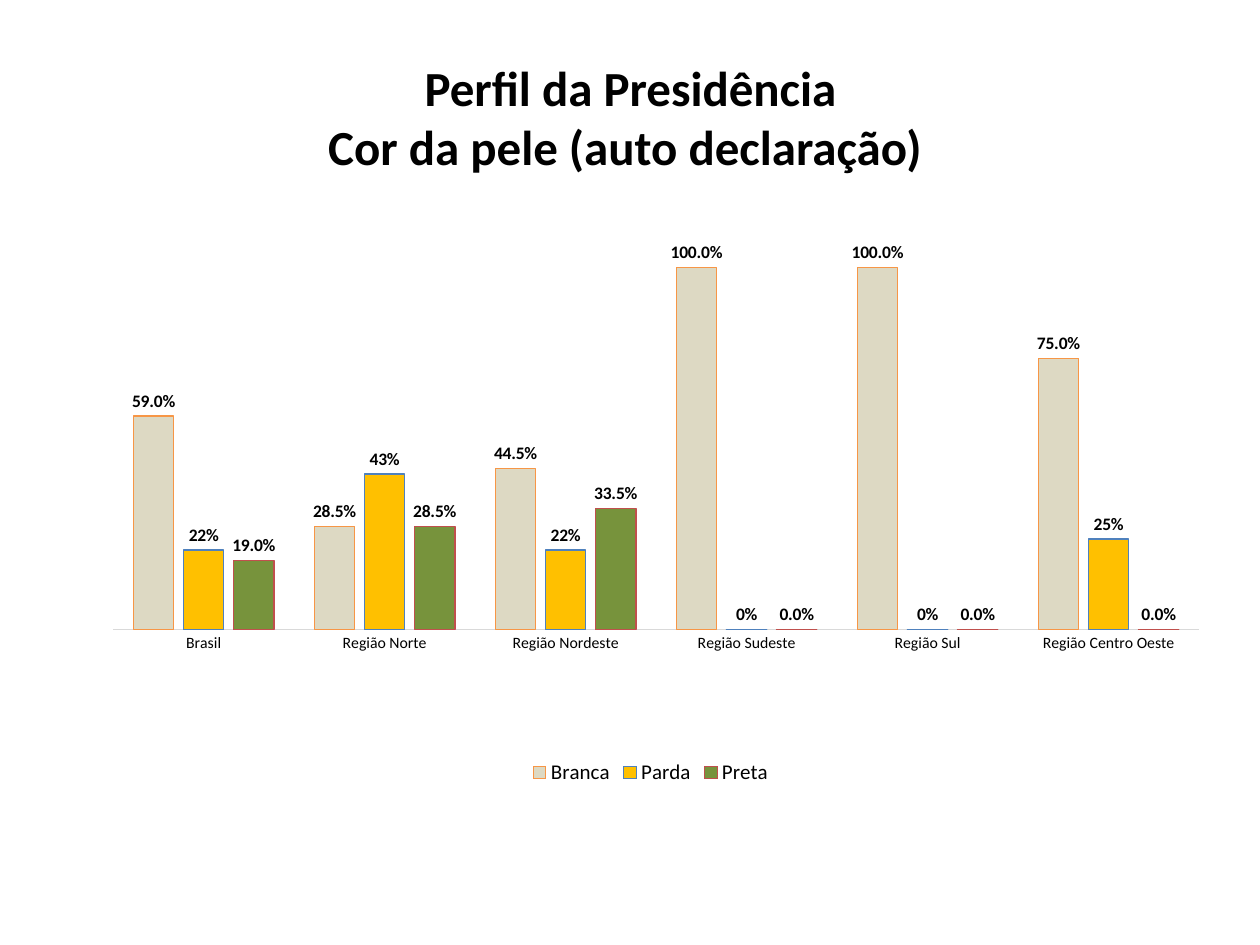
from lxml import etree
from pptx import Presentation
from pptx.chart.data import CategoryChartData
from pptx.dml.color import RGBColor
from pptx.enum.chart import XL_CHART_TYPE, XL_LABEL_POSITION, XL_LEGEND_POSITION, XL_TICK_MARK
from pptx.enum.text import MSO_ANCHOR, PP_ALIGN
from pptx.oxml.ns import qn
from pptx.util import Cm, Pt

CLUSTERED = XL_CHART_TYPE.COLUMN_CLUSTERED
OUTSIDE_END = XL_LABEL_POSITION.OUTSIDE_END
BOTTOM = XL_LEGEND_POSITION.BOTTOM
NO_TICK = XL_TICK_MARK.NONE
MIDDLE = MSO_ANCHOR.MIDDLE
CENTER = PP_ALIGN.CENTER

FONT = "Calibri"
COLORS = {
    "text": "000000",
    "axis": "D9D9D9",
    "Branca": "DDD9C3",
    "Branca line": "F79646",
    "Parda": "FFC000",
    "Parda line": "4F81BD",
    "Preta": "77933C",
    "Preta line": "C0504D",
}
REGIONS = ["Brasil", "Região Norte", "Região Nordeste", "Região Sudeste", "Região Sul", "Região Centro Oeste"]
SKIN_COLORS = [
    ("Branca", "0.0%", [0.59, 0.285, 0.445, 1, 1, 0.75]),
    ("Parda", "0%", [0.22, 0.43, 0.22, 0, 0, 0.25]),
    ("Preta", "0.0%", [0.19, 0.285, 0.335, 0, 0, 0]),
]


def rgb(name):
    return RGBColor.from_string(COLORS[name])


def style_font(font, size, bold=False):
    font.name = FONT
    font.size = Pt(size)
    font.bold = bold
    font.color.rgb = rgb("text")


prs = Presentation()
prs.slide_width = Cm(25.4)
prs.slide_height = Cm(19.05)
slide = prs.slides.add_slide(prs.slide_layouts[6])

title = slide.shapes.add_textbox(Cm(0.71), Cm(0.76), Cm(24), Cm(3.18)).text_frame
title.word_wrap = True
title.vertical_anchor = MIDDLE
title.text = "Perfil da Presidência\vCor da pele (auto declaração) "
heading = title.paragraphs[0]
heading.alignment = CENTER
for line in heading.runs:
    style_font(line.font, 28, True)

profile = CategoryChartData(number_format="0.0%")
profile.categories = REGIONS
for name, number_format, shares in SKIN_COLORS:
    profile.add_series(name, shares, number_format)
chart = slide.shapes.add_chart(CLUSTERED, Cm(1.9), Cm(3.94), Cm(22.43), Cm(11.99), profile).chart
chart.has_title = False
style_font(chart.font, 10)

chart.has_legend = True
chart.legend.position = BOTTOM
chart.legend.include_in_layout = False
style_font(chart.legend.font, 12)

regions_axis = chart.category_axis
regions_axis.major_tick_mark = NO_TICK
regions_axis.minor_tick_mark = NO_TICK
regions_axis.format.line.color.rgb = rgb("axis")
regions_axis.format.line.width = Pt(0.75)
style_font(regions_axis.tick_labels.font, 9)

share_axis = chart.value_axis
share_axis.minimum_scale = 0
share_axis.maximum_scale = 1.2
share_axis.has_major_gridlines = False
share_axis.tick_labels.number_format = "0.0%"
share_axis.tick_labels.number_format_is_linked = False
share_axis.visible = False

columns = chart.plots[0]
columns.gap_width = 100
columns.overlap = -24
columns.vary_by_categories = False
for series, (name, number_format, shares) in zip(columns.series, SKIN_COLORS):
    series.format.fill.solid()
    series.format.fill.fore_color.rgb = rgb(name)
    series.format.line.color.rgb = rgb(name + " line")
    series.format.line.width = Pt(0.75)
    labels = series.data_labels
    labels.show_value = True
    labels.position = OUTSIDE_END
    labels.number_format = number_format
    labels.number_format_is_linked = False
    style_font(labels.font, 10, True)

plot_area = chart._chartSpace.chart.plotArea
for automatic in plot_area.findall(qn("c:layout")):
    plot_area.remove(automatic)
layout = etree.Element(qn("c:layout"))
plot_area.insert(0, layout)
manual = etree.SubElement(layout, qn("c:manualLayout"))
for tag, value in [
    ("layoutTarget", "inner"), ("xMode", "edge"), ("yMode", "edge"),
    ("x", "0.017"), ("y", "0"), ("w", "0.976"), ("h", "0.73"),
]:
    etree.SubElement(manual, qn("c:" + tag)).set("val", value)

prs.save("out.pptx")
